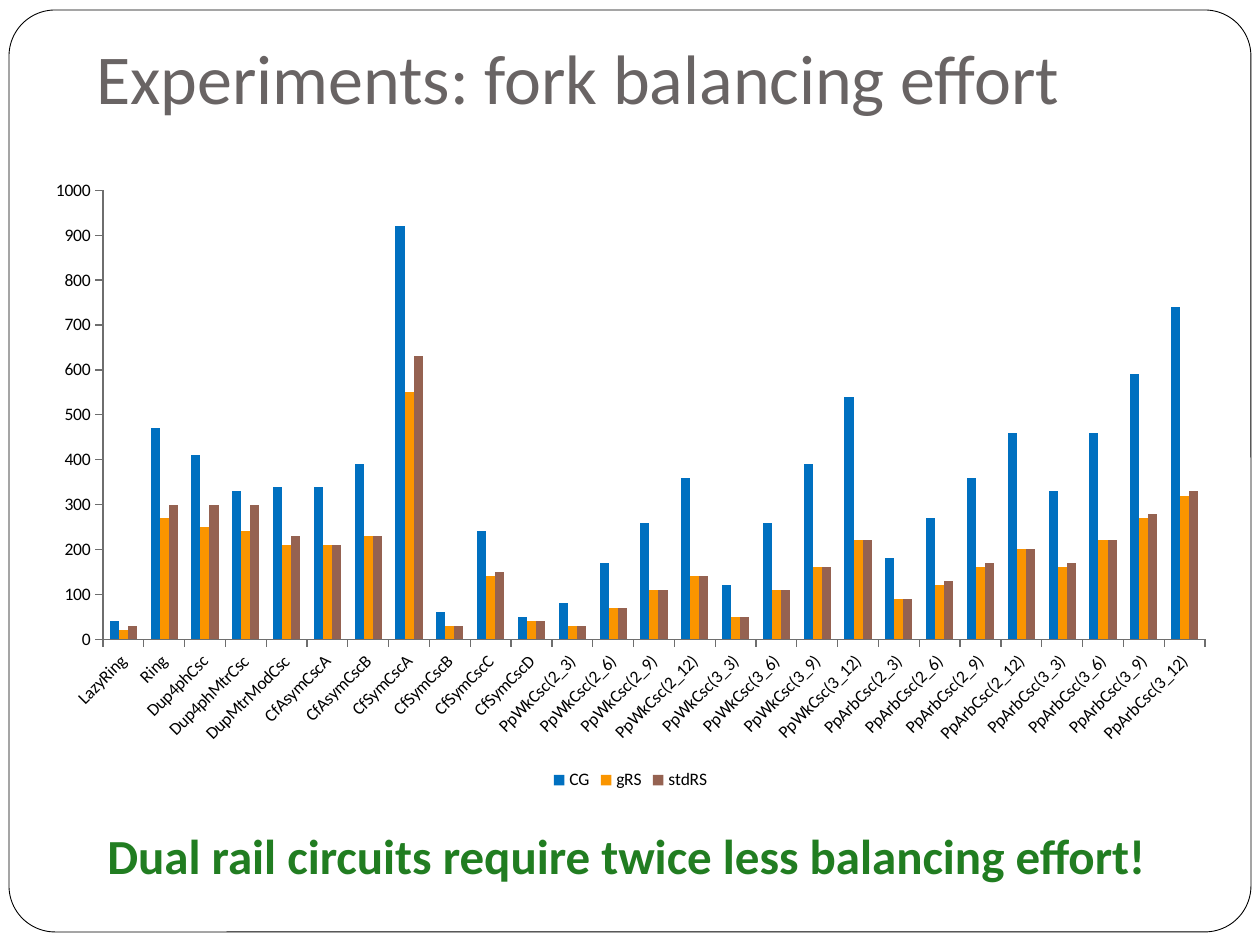
from pptx import Presentation
from pptx.chart.data import CategoryChartData
from pptx.dml.color import RGBColor
from pptx.enum.chart import XL_CHART_TYPE as ChartType, XL_LEGEND_POSITION as LegendPos, XL_TICK_MARK as Tick
from pptx.enum.shapes import MSO_SHAPE as Preset
from pptx.enum.text import MSO_ANCHOR as Anchor
from pptx.util import Emu, Pt

THEME = {
    "font": "Calibri",
    "paper": RGBColor.from_string("FFFFFF"),
    "ink": RGBColor.from_string("000000"),
    "title": RGBColor.from_string("696464"),
    "claim": RGBColor.from_string("217D21"),
    "axis": RGBColor.from_string("6E6E6E"),
    "bars": [RGBColor.from_string(c) for c in ("0070C0", "FA9500", "956251")],
    "title_size": Pt(40),
    "claim_size": Pt(28),
    "chart_size": Pt(10),
}
PX = 914400 // 126


def px(*lengths):
    return [Emu(n * PX) for n in lengths]


def add_line_of_text(box, wording, size, color, bold=False):
    box.text_frame.word_wrap = True
    run = box.text_frame.paragraphs[0].add_run()
    run.text = wording
    run.font.name = THEME["font"]
    run.font.size = size
    run.font.bold = bold
    run.font.color.rgb = color


deck = Presentation()
deck.slide_width, deck.slide_height = px(1260, 945)
slide = deck.slides.add_slide(deck.slide_layouts[6])

# Rounded frame
frame = slide.shapes.add_shape(Preset.ROUNDED_RECTANGLE, *px(9, 10, 1242, 922))
frame.adjustments[0] = 0.05
frame.shadow.inherit = False
frame.fill.solid()
frame.fill.fore_color.rgb = THEME["paper"]
frame.line.color.rgb = THEME["ink"]
frame.line.width = Pt(0.5)

# Title
title = slide.shapes.add_textbox(*px(84, 21, 1124, 111))
title.text_frame.vertical_anchor = Anchor.BOTTOM
title.text_frame.margin_bottom = px(13)[0]
add_line_of_text(title, "Experiments: fork balancing effort", THEME["title_size"], THEME["title"])

# Balancing effort per benchmark
pipelines = [f"{family}({ways}_{depth})" for family in ("PpWkCsc", "PpArbCsc")
             for ways in (2, 3) for depth in (3, 6, 9, 12)]
effort = CategoryChartData()
effort.categories = [
    "LazyRing", "Ring", "Dup4phCsc", "Dup4phMtrCsc", "DupMtrModCsc", "CfAsymCscA",
    "CfAsymCscB", "CfSymCscA", "CfSymCscB", "CfSymCscC", "CfSymCscD", *pipelines]
effort.add_series("CG", [
    40, 470, 410, 330, 340, 340, 390, 920, 60, 240, 50, 80, 170, 260,
    360, 120, 260, 390, 540, 180, 270, 360, 460, 330, 460, 590, 740])
effort.add_series("gRS", [
    20, 270, 250, 240, 210, 210, 230, 550, 30, 140, 40, 30, 70, 110,
    140, 50, 110, 160, 220, 90, 120, 160, 200, 160, 220, 270, 320])
effort.add_series("stdRS", [
    30, 300, 300, 300, 230, 210, 230, 630, 30, 150, 40, 30, 70, 110,
    140, 50, 110, 160, 220, 90, 130, 170, 200, 170, 220, 280, 330])
chart = slide.shapes.add_chart(
    ChartType.COLUMN_CLUSTERED, *px(32, 168, 1197, 627), effort).chart
chart.has_title = False
chart.font.name = THEME["font"]
chart.font.size = THEME["chart_size"]
chart.font.color.rgb = THEME["ink"]

bars = chart.plots[0]
bars.vary_by_categories = False
bars.gap_width = 150
bars.overlap = 0
for series, color in zip(bars.series, THEME["bars"]):
    series.format.fill.solid()
    series.format.fill.fore_color.rgb = color

# Axes and legend
for axis in (chart.category_axis, chart.value_axis):
    axis.has_major_gridlines = False
    axis.major_tick_mark = Tick.OUTSIDE
    axis.minor_tick_mark = Tick.NONE
    axis.format.line.color.rgb = THEME["axis"]
chart.value_axis.minimum_scale = 0
chart.value_axis.maximum_scale = 1000
chart.value_axis.major_unit = 100
chart.has_legend = True
chart.legend.position = LegendPos.BOTTOM
chart.legend.include_in_layout = False

# Conclusion
claim = slide.shapes.add_textbox(*px(95, 819, 1134, 72))
add_line_of_text(claim, "Dual rail circuits require twice less balancing effort!",
                 THEME["claim_size"], THEME["claim"], bold=True)

deck.save("out.pptx")
